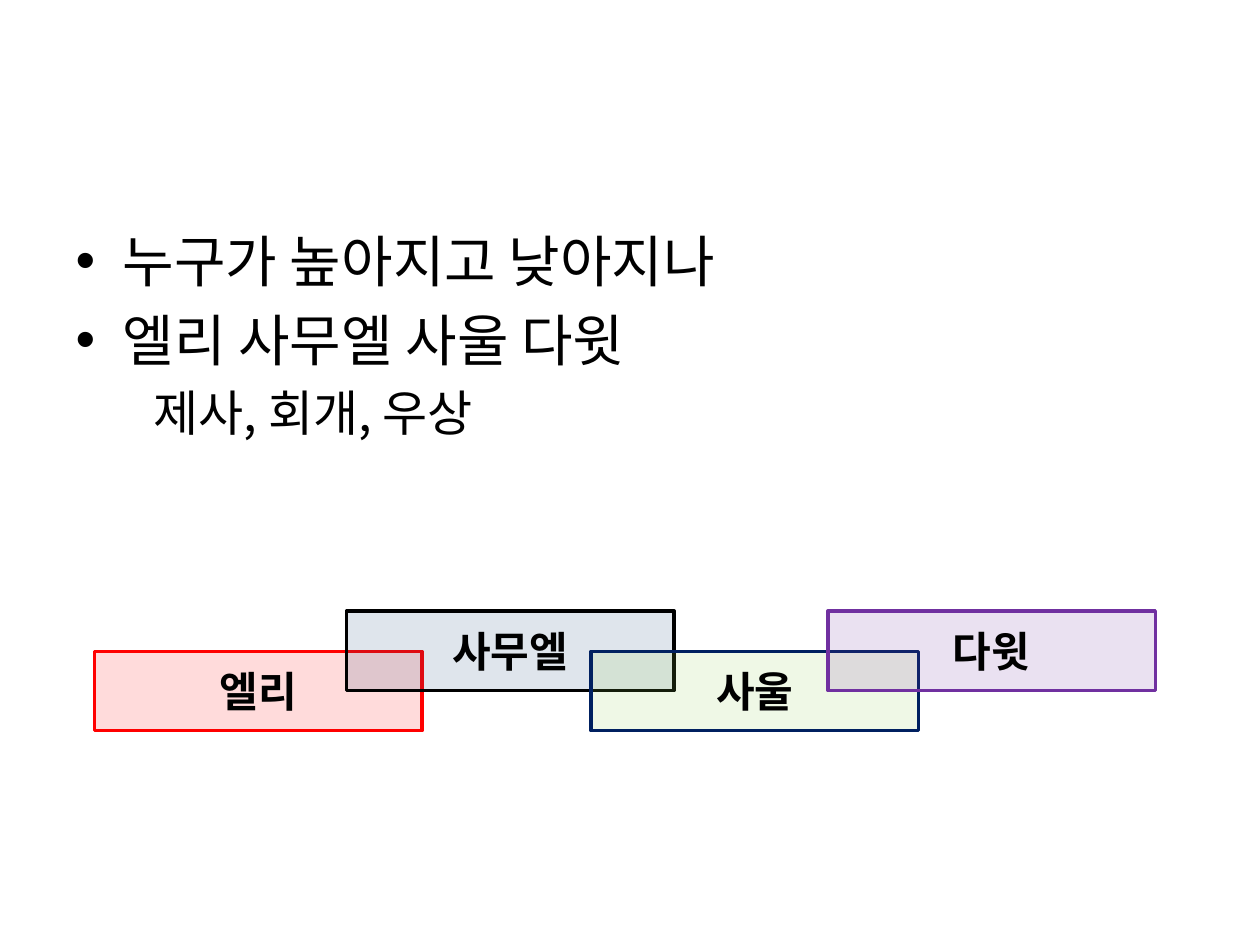
from dataclasses import dataclass

from lxml import etree
from pptx import Presentation
from pptx.dml.color import RGBColor
from pptx.enum.shapes import MSO_SHAPE
from pptx.enum.text import MSO_ANCHOR, PP_ALIGN
from pptx.oxml.ns import qn
from pptx.util import Inches, Pt

RECTANGLE = MSO_SHAPE.RECTANGLE
MIDDLE = MSO_ANCHOR.MIDDLE
CENTER = PP_ALIGN.CENTER
TITLE_AND_CONTENT = 1


@dataclass(frozen=True)
class Theme:
    font: str = "Noto Sans CJK KR"
    text: str = "000000"
    red: str = "FF0000"
    blue: str = "1F497D"
    green: str = "92D050"
    navy: str = "002060"
    purple: str = "7030A0"
    bullet_size: int = 32
    detail_size: int = 28
    label_size: int = 24
    line_width: int = 2
    fill_opacity: int = 14


class SlideBuilder:
    def __init__(self, slide, theme):
        self.slide = slide
        self.theme = theme

    def format_runs(self, paragraph, size, bold=False):
        for run in paragraph.runs:
            run.font.name = self.theme.font
            run.font.size = Pt(size)
            run.font.bold = bold
            run.font.color.rgb = RGBColor.from_string(self.theme.text)
            east_asian = etree.SubElement(run.font._element, qn("a:ea"))
            east_asian.set("typeface", self.theme.font)

    def add_body(self, bullets, detail):
        """Fill the body placeholder with bullets and one unbulleted line below."""
        body = self.slide.placeholders[1]
        body.left, body.top = Inches(0.5), Inches(1.75)
        body.width, body.height = Inches(9), Inches(4.95)
        text_frame = body.text_frame
        text_frame.text = "\n".join([*bullets, detail])
        *bullet_paragraphs, detail_paragraph = text_frame.paragraphs
        for paragraph in bullet_paragraphs:
            self.format_runs(paragraph, self.theme.bullet_size)
        self.format_runs(detail_paragraph, self.theme.detail_size)
        properties = detail_paragraph._p.get_or_add_pPr()
        properties.set("marL", str(Inches(0.62)))
        properties.set("indent", "0")
        etree.SubElement(properties, qn("a:buNone"))

    def add_period(self, name, left, top, fill, line):
        """Add a see-through bar for one leader's time."""
        shape = self.slide.shapes.add_shape(
            RECTANGLE, Inches(left), Inches(top), Inches(2.6), Inches(0.63))
        shape.shadow.inherit = False
        shape.fill.solid()
        shape.fill.fore_color.rgb = RGBColor.from_string(fill)
        color = shape._element.spPr.find(qn("a:solidFill")).find(qn("a:srgbClr"))
        alpha = etree.SubElement(color, qn("a:alpha"))
        alpha.set("val", str(self.theme.fill_opacity * 1000))
        shape.line.color.rgb = RGBColor.from_string(line)
        shape.line.width = Pt(self.theme.line_width)
        text_frame = shape.text_frame
        text_frame.text = name
        text_frame.vertical_anchor = MIDDLE
        paragraph = text_frame.paragraphs[0]
        paragraph.alignment = CENTER
        self.format_runs(paragraph, self.theme.label_size, bold=True)


def main():
    presentation = Presentation()
    presentation.slide_width, presentation.slide_height = Inches(10), Inches(7.5)
    slide = presentation.slides.add_slide(
        presentation.slide_layouts[TITLE_AND_CONTENT])
    title = slide.shapes.title._element
    title.getparent().remove(title)

    theme = Theme()
    builder = SlideBuilder(slide, theme)
    builder.add_body(["누구가 높아지고 낮아지나", "엘리 사무엘 사울 다윗"],
                     "제사, 회개, 우상")

    lower, upper = 5.17, 4.85
    periods = [
        ("엘리", 0.75, lower, theme.red, theme.red),
        ("사무엘", 2.75, upper, theme.blue, theme.text),
        ("사울", 4.69, lower, theme.green, theme.navy),
        ("다윗", 6.57, upper, theme.purple, theme.purple),
    ]
    for period in periods:
        builder.add_period(*period)

    presentation.save("out.pptx")


if __name__ == "__main__":
    main()
